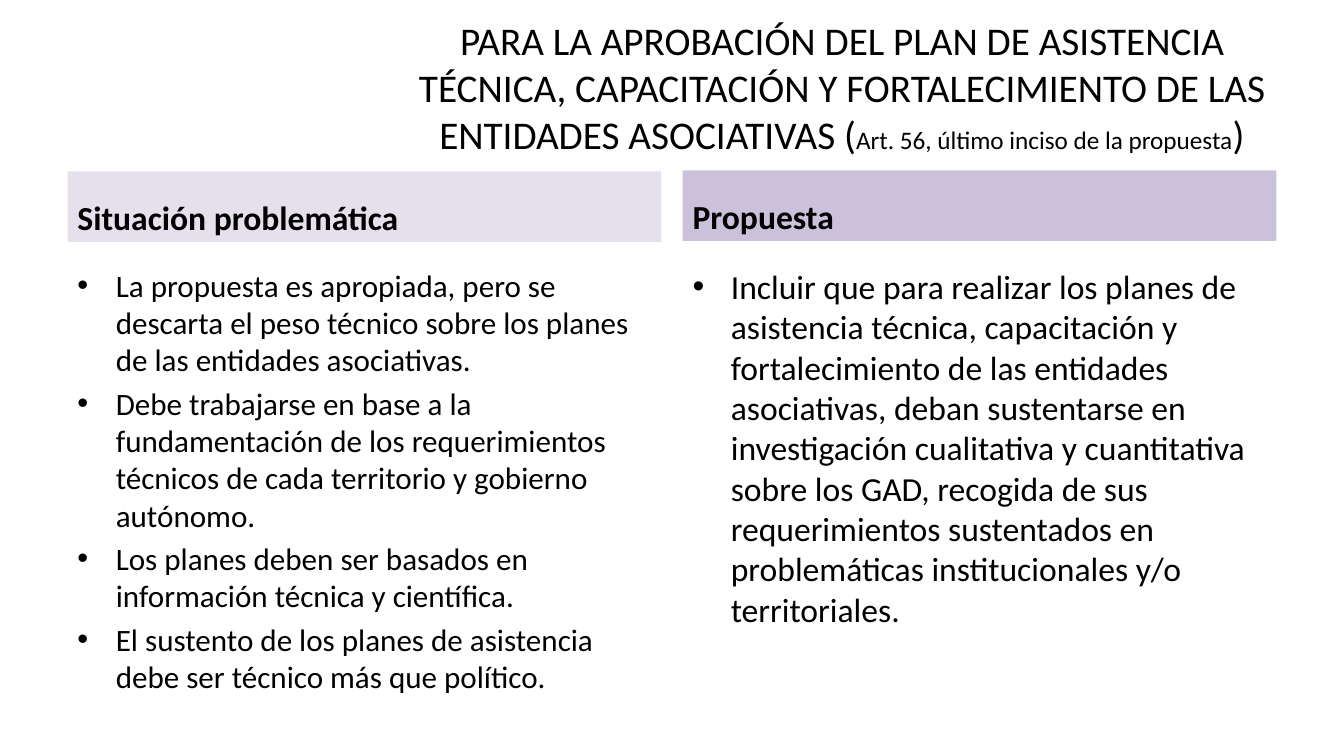
"""Builds a slide that sets a problem beside its proposal."""
from lxml import etree
from pptx import Presentation
from pptx.dml.color import RGBColor
from pptx.enum.shapes import MSO_SHAPE
from pptx.enum.text import MSO_ANCHOR, PP_ALIGN
from pptx.oxml.ns import qn
from pptx.util import Inches, Pt

RECT = MSO_SHAPE.RECTANGLE
TOP, MIDDLE, BOTTOM = MSO_ANCHOR.TOP, MSO_ANCHOR.MIDDLE, MSO_ANCHOR.BOTTOM
LEFT, CENTER = PP_ALIGN.LEFT, PP_ALIGN.CENTER

TITLE = [
    ("PARA LA APROBACIÓN DEL PLAN DE ASISTENCIA TÉCNICA, CAPACITACIÓN Y "
     "FORTALECIMIENTO DE LAS ENTIDADES ASOCIATIVAS (", 28),
    ("Art. 56, último inciso de la propuesta", 18),
    (")", 28),
]
ISSUES = [
    "La propuesta es apropiada, pero se descarta el peso técnico sobre los "
    "planes de las entidades asociativas.",
    "Debe trabajarse en base a la fundamentación de los requerimientos "
    "técnicos de cada territorio y gobierno autónomo.",
    "Los planes deben ser basados en información técnica y científica.",
    "El sustento de los planes de asistencia debe ser técnico más que "
    "político.",
]
PLAN = [
    "Incluir que para realizar los planes de asistencia técnica, "
    "capacitación y fortalecimiento de las entidades asociativas, deban "
    "sustentarse en investigación cualitativa y cuantitativa sobre los GAD, "
    "recogida de sus requerimientos sustentados en problemáticas "
    "institucionales y/o territoriales.",
]
WIDTH = 5.89
COLUMNS = [
    (0.67, 1.7, "E6E0EC", "Situación problemática", ISSUES, 22.2),
    (6.77, 1.69, "CCC1DA", "Propuesta", PLAN, 24),
]


def color(code):
    return RGBColor.from_string(code)


class Page:
    """Holds the text style and the current slide."""

    def __init__(self, slide, face="Calibri", ink="000000"):
        self.slide, self.face, self.ink = slide, face, ink

    def style(self, font, size=None, bold=False):
        font.name = self.face
        font.color.rgb = color(self.ink)
        font.bold = bold
        if size:
            font.size = Pt(size)

    def box(self, x, y, w, h, anchor):
        shape = self.slide.shapes.add_textbox(
            Inches(x), Inches(y), Inches(w), Inches(h))
        frame = shape.text_frame
        frame.word_wrap = True
        frame.vertical_anchor = anchor
        return frame

    def title(self, x, y, w, h, parts):
        para = self.box(x, y, w, h, MIDDLE).paragraphs[0]
        para.alignment = CENTER
        self.style(para.font)
        for text, size in parts:
            run = para.add_run()
            run.text = text
            run.font.size = Pt(size)

    def header(self, x, y, w, h, text, fill):
        shape = self.slide.shapes.add_shape(
            RECT, Inches(x), Inches(y), Inches(w), Inches(h))
        shape.shadow.inherit = False
        shape.fill.solid()
        shape.fill.fore_color.rgb = color(fill)
        shape.line.fill.background()
        frame = shape.text_frame
        frame.word_wrap = True
        frame.vertical_anchor = BOTTOM
        para = frame.paragraphs[0]
        para.text = text
        para.alignment = LEFT
        self.style(para.font, 24, True)

    def bullets(self, x, y, w, h, items, size):
        frame = self.box(x, y, w, h, TOP)
        for i, text in enumerate(items):
            para = frame.add_paragraph() if i else frame.paragraphs[0]
            para.text = text
            if i:
                para.space_before = Pt(round(size * 0.2, 1))
            props = para._p.get_or_add_pPr()
            props.set("marL", str(Inches(0.38)))
            props.set("indent", str(Inches(-0.38)))
            etree.SubElement(props, qn("a:buFont")).set("typeface", "Arial")
            etree.SubElement(props, qn("a:buChar")).set("char", "•")
            self.style(para.font, size)


def main():
    deck = Presentation()
    deck.slide_width, deck.slide_height = Inches(13.33), Inches(7.5)
    page = Page(deck.slides.add_slide(deck.slide_layouts[6]))
    page.title(4.04, 0.24, 8.62, 1.25, TITLE)
    for x, y, fill, head, items, size in COLUMNS:
        page.header(x, y, WIDTH, 0.7, head, fill)
        page.bullets(x, 2.59, WIDTH, 4.11, items, size)
    deck.save("out.pptx")


if __name__ == "__main__":
    main()
